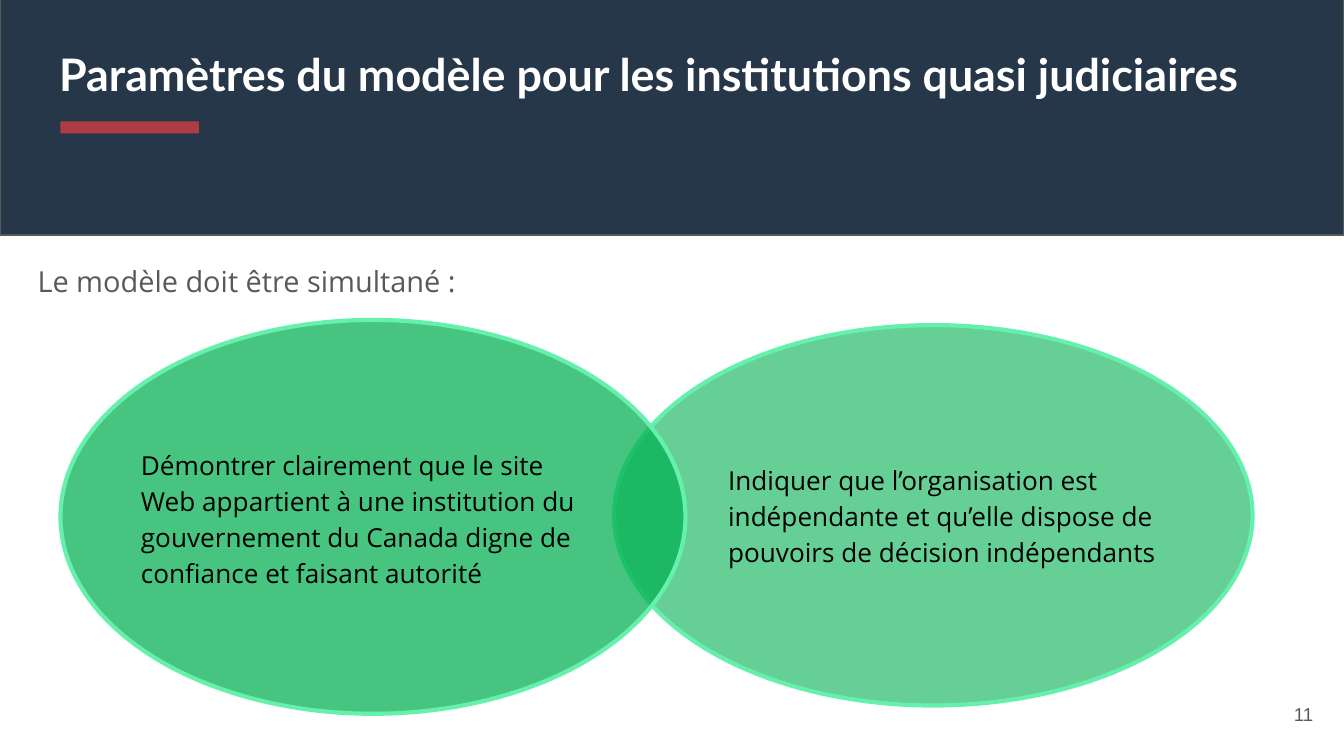
from dataclasses import dataclass

from lxml import etree
from pptx import Presentation
from pptx.dml.color import RGBColor
from pptx.enum.shapes import MSO_SHAPE
from pptx.enum.text import MSO_ANCHOR, PP_ALIGN
from pptx.oxml.ns import qn
from pptx.util import Pt

RECTANGLE, OVAL = MSO_SHAPE.RECTANGLE, MSO_SHAPE.OVAL
TOP, MIDDLE = MSO_ANCHOR.TOP, MSO_ANCHOR.MIDDLE
LEFT, RIGHT = PP_ALIGN.LEFT, PP_ALIGN.RIGHT


@dataclass(frozen=True)
class Theme:
    navy: str = "26374A"
    red: str = "AF3C43"
    green: str = "00B050"
    mint: str = "65F0AD"
    gray: str = "595959"
    white: str = "FFFFFF"
    black: str = "000000"
    title_size: float = 24
    intro_size: float = 15.5
    body_size: float = 14
    number_size: float = 10
    title_font: str = "Lato"
    body_font: str = "Open Sans"
    number_font: str = "Arial"


theme = Theme()


def add_shape(kind, bounds, fill, line=None, width=0.75, opacity=100):
    shape = page.shapes.add_shape(kind, *map(Pt, bounds))
    shape.shadow.inherit = False
    shape.fill.solid()
    shape.fill.fore_color.rgb = RGBColor.from_string(fill)
    if opacity < 100:
        color = shape.fill._xPr.find(".//" + qn("a:srgbClr"))
        etree.SubElement(color, qn("a:alpha"), val=str(opacity * 1000))
    if line:
        shape.line.color.rgb = RGBColor.from_string(line)
        shape.line.width = Pt(width)
    else:
        shape.line.fill.background()


def write_text(box, text, size, font, color, bold=False, align=LEFT, anchor=TOP,
               spacing=1.0, indent=0, inset=7.2):
    frame = box.text_frame
    frame.word_wrap = True
    frame.vertical_anchor = anchor
    frame.margin_left = frame.margin_right = Pt(7.2)
    frame.margin_top = frame.margin_bottom = Pt(inset)
    para = frame.paragraphs[0]
    para.alignment = align
    para.line_spacing = spacing
    if indent:
        para._p.get_or_add_pPr().set("marL", str(Pt(indent)))
    span = para.add_run()
    span.text = text
    span.font.size = Pt(size)
    span.font.name = font
    span.font.bold = bold
    span.font.color.rgb = RGBColor.from_string(color)


deck = Presentation()
deck.slide_width, deck.slide_height = Pt(720), Pt(405)
page = deck.slides.add_slide(deck.slide_layouts[5])

# Header band, with the title brought in front of it
add_shape(RECTANGLE, (0, -0.7, 720, 126.7), theme.navy, theme.gray)
title = page.shapes.title
title.left, title.top, title.width, title.height = map(Pt, (24.5, 18, 690.5, 75.6))
write_text(title, "Paramètres du modèle pour les institutions quasi judiciaires",
           theme.title_size, theme.title_font, theme.white, bold=True)
page.shapes._spTree.append(title._element)
add_shape(RECTANGLE, (32.4, 65, 74.2, 6.5), theme.red)

# Introductory line
intro = page.shapes.add_textbox(Pt(13), Pt(131), Pt(658), Pt(40))
write_text(intro, "Le modèle doit être simultané\u00a0:", theme.intro_size,
           theme.body_font, theme.gray, spacing=1.15)

# Overlapping ellipses, right one behind
for bounds, opacity in (((329, 174.2, 342, 203.8), 60),
                        ((32.4, 171.4, 334.8, 211), 72)):
    add_shape(OVAL, bounds, theme.green, theme.mint, 2.25, opacity)

# Text over the ellipses
statements = (
    ((32.4, 234.7, 291.6, 84.2),
     "Démontrer clairement que le site Web appartient à une institution du "
     "gouvernement du Canada digne de confiance et faisant autorité"),
    ((347, 242.6, 313.9, 64.8),
     "Indiquer que l’organisation est indépendante et qu’elle dispose de "
     "pouvoirs de décision indépendants"),
)
for bounds, text in statements:
    box = page.shapes.add_textbox(*map(Pt, bounds))
    write_text(box, text, theme.body_size, theme.body_font, theme.black,
               spacing=1.15, indent=36, inset=3.6)

# Page number
number = page.shapes.add_textbox(Pt(667.4), Pt(367.2), Pt(43.2), Pt(31))
write_text(number, "11", theme.number_size, theme.number_font, theme.gray,
           align=RIGHT, anchor=MIDDLE)

deck.save("out.pptx")
